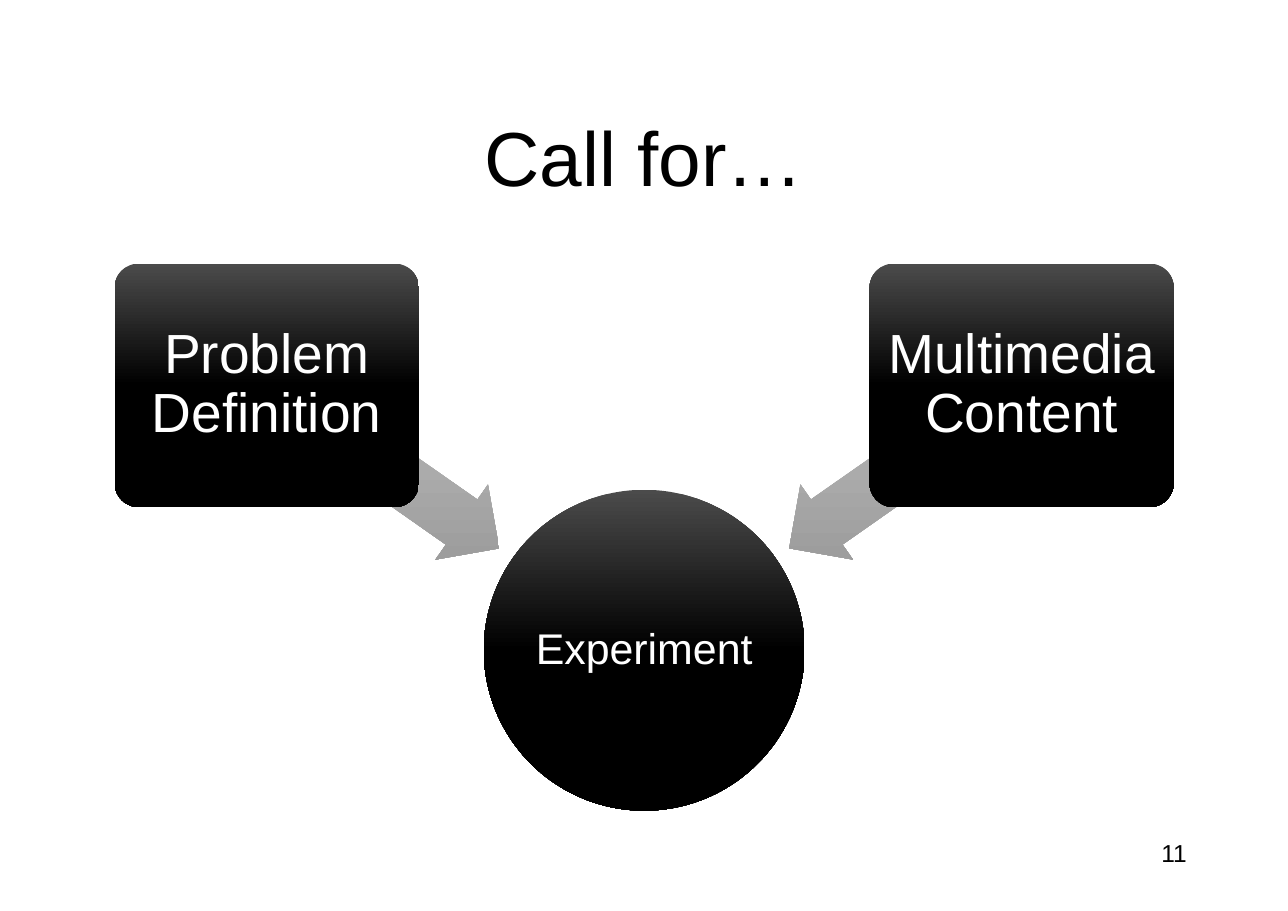
from dataclasses import dataclass

from pptx import Presentation
from pptx.dml.color import RGBColor
from pptx.enum.shapes import MSO_SHAPE
from pptx.enum.text import MSO_ANCHOR, PP_ALIGN
from pptx.oxml import parse_xml
from pptx.oxml.ns import nsdecls
from pptx.util import Cm, Pt

ROUNDED, ELLIPSE, LEFT_ARROW = (
    MSO_SHAPE.ROUNDED_RECTANGLE, MSO_SHAPE.OVAL, MSO_SHAPE.LEFT_ARROW)
TOP, MIDDLE = MSO_ANCHOR.TOP, MSO_ANCHOR.MIDDLE
CENTER, RIGHT = PP_ALIGN.CENTER, PP_ALIGN.RIGHT

# Content
TITLE = "Call for…"
INPUTS = ["Problem Definition", "Multimedia Content"]
RESULT = "Experiment"
PAGE_NUMBER = "11"


@dataclass(frozen=True)
class Theme:
    font: str = "Arial"
    dark: str = "000000"
    light: str = "FFFFFF"
    node_gradient: tuple = ((0, "4B4B4B"), (50, "000000"), (100, "000000"))
    arrow_gradient: tuple = ((0, "B5B5B5"), (50, "ABABAB"), (100, "989898"))
    title_size: int = 50
    input_size: int = 36
    result_size: int = 28
    page_size: int = 16


THEME = Theme()

# Layout in centimetres; the diagram is symmetric about CENTER_X
CENTER_X = 14.84
TITLE_TOP, TITLE_WIDTH, TITLE_HEIGHT = 1.85, 25.25, 3.5
INPUT_LEFT, INPUT_TOP, INPUT_WIDTH, INPUT_HEIGHT = 2.64, 6.07, 7.01, 5.61
ARROW_LEFT, ARROW_TOP, ARROW_WIDTH, ARROW_HEIGHT = 5.56, 9.7, 6.53, 2.11
ARROW_TILT = 35
CIRCLE_TOP, CIRCLE_SIZE = 11.28, 7.39


def mirrored(left, width):
    return left, 2 * CENTER_X - left - width


def write_text(shape, text, *, size, color=THEME.light, align=CENTER,
               anchor=MIDDLE, inset=0.15, wrap=True, line_spacing=1.0):
    frame = shape.text_frame
    frame.word_wrap = wrap
    frame.vertical_anchor = anchor
    frame.margin_left = frame.margin_right = Cm(inset)
    frame.margin_top = frame.margin_bottom = Cm(inset)
    paragraph = frame.paragraphs[0]
    paragraph.alignment = align
    paragraph.line_spacing = line_spacing
    run = paragraph.add_run()
    run.text = text
    run.font.name = THEME.font
    run.font.size = Pt(size)
    run.font.color.rgb = RGBColor.from_string(color)


def add_gradient_shape(slide, kind, left, top, width, height, gradient):
    shape = slide.shapes.add_shape(kind, Cm(left), Cm(top), Cm(width), Cm(height))
    shape.shadow.inherit = False
    shape.line.fill.background()
    stops = "".join(
        f'<a:gs pos="{position * 1000}"><a:srgbClr val="{color}"/></a:gs>'
        for position, color in gradient)
    shape.fill.background()
    properties = shape.element.spPr
    properties.replace(properties.find("{*}noFill"), parse_xml(
        f'<a:gradFill {nsdecls("a")} rotWithShape="0"><a:gsLst>{stops}</a:gsLst>'
        '<a:lin ang="5400000" scaled="0"/></a:gradFill>'))
    return shape


def main():
    presentation = Presentation()
    presentation.slide_width, presentation.slide_height = Cm(29.67), Cm(20.98)
    slide = presentation.slides.add_slide(presentation.slide_layouts[5])

    # Title
    title = slide.shapes.title
    title.left, title.top = Cm(CENTER_X - TITLE_WIDTH / 2), Cm(TITLE_TOP)
    title.width, title.height = Cm(TITLE_WIDTH), Cm(TITLE_HEIGHT)
    write_text(title, TITLE, size=THEME.title_size, color=THEME.dark)

    # Result circle
    circle = add_gradient_shape(
        slide, ELLIPSE, CENTER_X - CIRCLE_SIZE / 2, CIRCLE_TOP,
        CIRCLE_SIZE, CIRCLE_SIZE, THEME.node_gradient)
    write_text(circle, RESULT, size=THEME.result_size, inset=0.05, line_spacing=0.9)

    # Input boxes, each over the tail of its arrow
    for text, box_left, arrow_left, rotation in zip(
            INPUTS, mirrored(INPUT_LEFT, INPUT_WIDTH),
            mirrored(ARROW_LEFT, ARROW_WIDTH),
            (180 + ARROW_TILT, 360 - ARROW_TILT)):
        arrow = add_gradient_shape(
            slide, LEFT_ARROW, arrow_left, ARROW_TOP,
            ARROW_WIDTH, ARROW_HEIGHT, THEME.arrow_gradient)
        arrow.rotation = rotation
        arrow.adjustments[0], arrow.adjustments[1] = 0.6, 0.5
        box = add_gradient_shape(
            slide, ROUNDED, box_left, INPUT_TOP,
            INPUT_WIDTH, INPUT_HEIGHT, THEME.node_gradient)
        box.adjustments[0] = 0.1
        write_text(box, text, size=THEME.input_size, line_spacing=0.9)

    # Page number
    page_box = slide.shapes.add_textbox(Cm(26.52), Cm(19.15), Cm(0.97), Cm(0.91))
    write_text(page_box, PAGE_NUMBER, size=THEME.page_size, color=THEME.dark,
               align=RIGHT, anchor=TOP, wrap=False)

    presentation.save("out.pptx")


if __name__ == "__main__":
    main()
